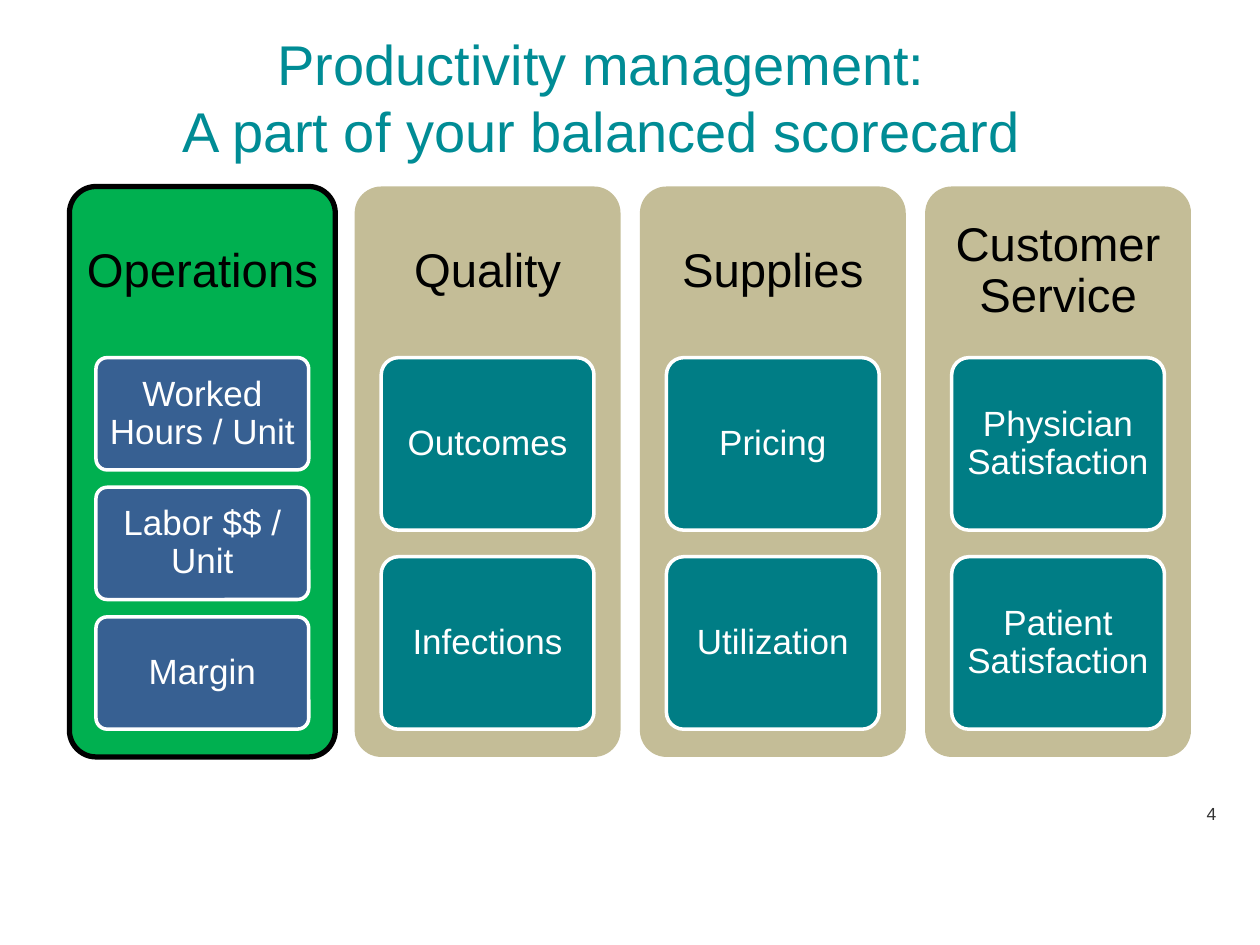
from pptx import Presentation
from pptx.dml.color import RGBColor
from pptx.enum.shapes import MSO_SHAPE as Shape
from pptx.enum.text import MSO_ANCHOR as Anchor, PP_ALIGN as Align
from pptx.util import Cm, Pt

# Content
TITLE = ["Productivity management:", "A part of your balanced scorecard"]
PAGE_NUMBER = "4"
# heading, column fill, column outline, card fill, cards
COLUMNS = [
    ("Operations", "green", "black", "blue",
     ["Worked Hours / Unit", "Labor $$ / Unit", "Margin"]),
    ("Quality", "tan", None, "teal", ["Outcomes", "Infections"]),
    ("Supplies", "tan", None, "teal", ["Pricing", "Utilization"]),
    ("Customer Service", "tan", None, "teal",
     ["Physician Satisfaction", "Patient Satisfaction"]),
]
COLORS = {
    "title": "008C95", "black": "000000", "white": "FFFFFF", "gray": "333333",
    "green": "00B050", "tan": "C4BD97", "blue": "376092", "teal": "007D85",
}
FONT = "Arial"

# Measures in centimetres
COLUMN_LEFT, COLUMN_TOP, COLUMN_PITCH = 1.4, 3.76, 5.75
COLUMN_WIDTH, COLUMN_HEIGHT = 5.36, 11.5
HEADING_HEIGHT = 3.45
CARD_WIDTH, CARD_AREA = 4.29, 7.49
GAP_RATIO = 0.154  # gap between cards as a share of card height


def color(name):
    return RGBColor.from_string(COLORS[name])


def write(box, lines, size, color_name, align=Align.CENTER,
          inset=(0.25, 0.13), spacing=None):
    frame = box.text_frame
    frame.word_wrap = True
    frame.vertical_anchor = Anchor.MIDDLE
    frame.margin_left = frame.margin_right = Cm(inset[0])
    frame.margin_top = frame.margin_bottom = Cm(inset[1])
    para = frame.paragraphs[0]
    para.alignment = align
    if spacing:
        para.line_spacing = spacing
    for index, line in enumerate(lines):
        if index:
            para.add_line_break()
        span = para.add_run()
        span.text = line
        span.font.name = FONT
        span.font.size = Pt(size)
        span.font.color.rgb = color(color_name)


def add_panel(page, left, top, width, height, fill, outline, weight):
    panel = page.shapes.add_shape(
        Shape.ROUNDED_RECTANGLE, Cm(left), Cm(top), Cm(width), Cm(height))
    panel.adjustments[0] = 0.1
    panel.shadow.inherit = False
    panel.fill.solid()
    panel.fill.fore_color.rgb = color(fill)
    if outline:
        panel.line.color.rgb = color(outline)
        panel.line.width = Pt(weight)
    else:
        panel.line.fill.background()
    return panel


def add_column(page, left, heading, fill, outline, card_fill, cards):
    add_panel(page, left, COLUMN_TOP, COLUMN_WIDTH, COLUMN_HEIGHT,
              fill, outline, 3)
    box = page.shapes.add_textbox(
        Cm(left), Cm(COLUMN_TOP), Cm(COLUMN_WIDTH), Cm(HEADING_HEIGHT))
    write(box, [heading], 27, "black", inset=(0.28, 0.28), spacing=0.9)

    # Cards share the area below the heading
    count = len(cards)
    height = CARD_AREA / (count + (count - 1) * GAP_RATIO)
    card_left = left + (COLUMN_WIDTH - CARD_WIDTH) / 2
    for row, label in enumerate(cards):
        top = COLUMN_TOP + HEADING_HEIGHT + row * height * (1 + GAP_RATIO)
        card = add_panel(page, card_left, top, CARD_WIDTH, height,
                         card_fill, "white", 2)
        write(card, [label], 20, "white", inset=(0.15, 0.1), spacing=0.9)


def main():
    deck = Presentation()
    deck.slide_width, deck.slide_height = Cm(25.4), Cm(19.05)
    page = deck.slides.add_slide(deck.slide_layouts[5])

    # Title
    title = page.shapes.title
    title.left, title.top = Cm(1.14), Cm(0.86)
    title.width, title.height = Cm(21.97), Cm(2.16)
    write(title, TITLE, 32, "title")

    # Scorecard columns
    for index, column in enumerate(COLUMNS):
        add_column(page, COLUMN_LEFT + index * COLUMN_PITCH, *column)

    # Page number
    number = page.shapes.add_textbox(Cm(21.8), Cm(16.1), Cm(2.97), Cm(0.6))
    write(number, [PAGE_NUMBER], 10, "gray", Align.RIGHT)

    deck.save("out.pptx")


if __name__ == "__main__":
    main()
